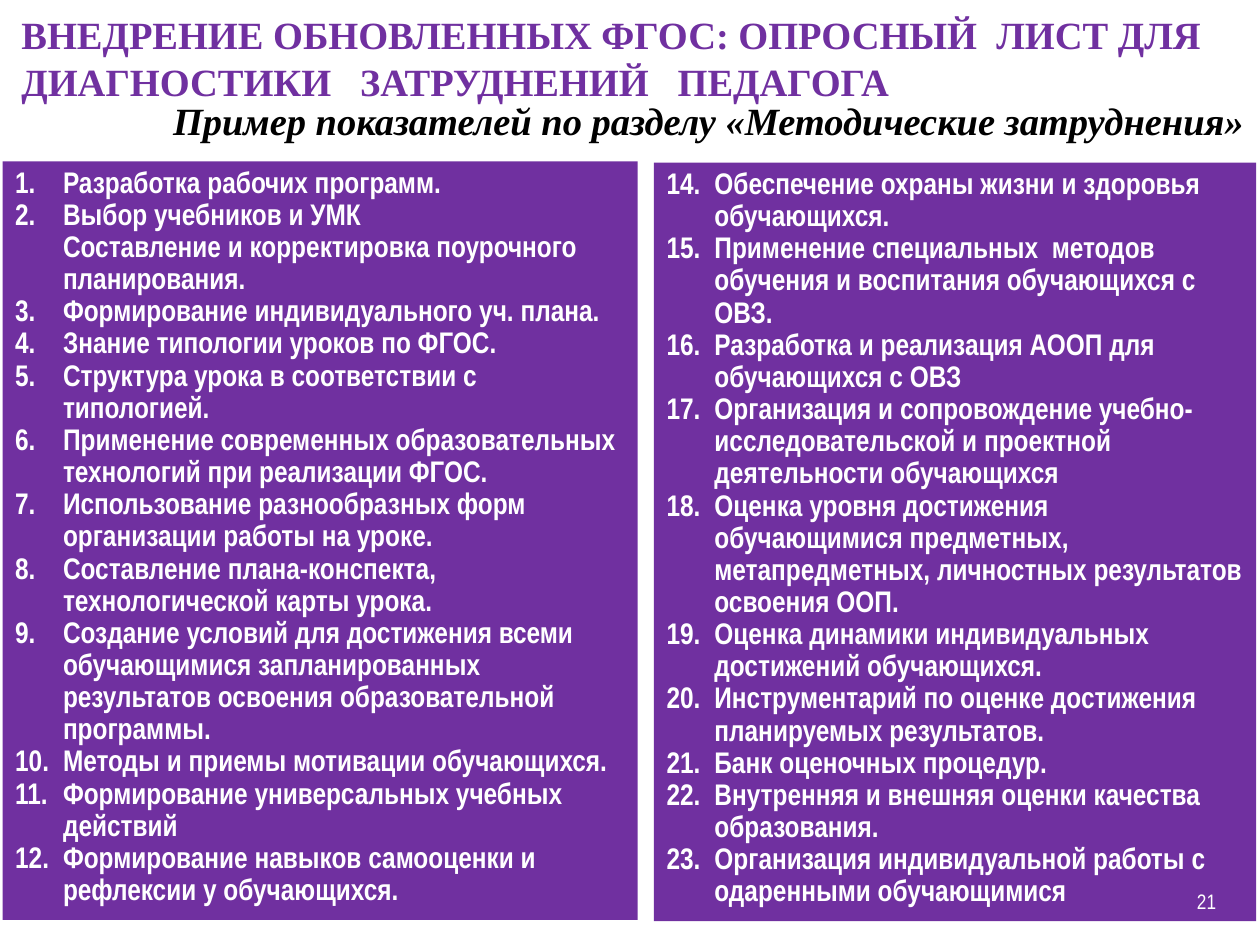
from copy import deepcopy
from dataclasses import dataclass

from pptx import Presentation
from pptx.dml.color import RGBColor
from pptx.enum.text import MSO_ANCHOR as Anchor, MSO_AUTO_SIZE as AutoSize, PP_ALIGN as Align
from pptx.oxml.ns import qn
from pptx.oxml.xmlchemy import OxmlElement
from pptx.util import Inches, Pt

PURPLE = RGBColor(0x70, 0x30, 0xA0)
WHITE = RGBColor(0xFF, 0xFF, 0xFF)
BLACK = RGBColor(0, 0, 0)
SERIF = "Times New Roman"
NARROW = "Arial Narrow"
INDENT = Inches(0.38)


@dataclass(frozen=True)
class Area:
    left: float
    top: float
    width: float
    height: float


@dataclass(frozen=True)
class Panel:
    area: Area
    start: int
    items: tuple[str, ...]


PANELS = (
    Panel(Area(0.02, 1.28, 5.04, 6.02), 1, (
        "Разработка рабочих программ.",
        "Выбор учебников и УМК \vСоставление и корректировка поурочного планирования.",
        "Формирование индивидуального уч. плана.",
        "Знание типологии уроков по ФГОС.",
        "Структура урока в соответствии с типологией.",
        "Применение современных образовательных технологий при реализации ФГОС.",
        "Использование разнообразных форм организации работы на уроке.",
        "Составление плана-конспекта, технологической карты урока.",
        "Создание условий для достижения всеми обучающимися запланированных "
        "результатов освоения образовательной программы.",
        "Методы и приемы мотивации обучающихся.",
        "Формирование универсальных учебных действий",
        "Формирование навыков самооценки и рефлексии у обучающихся.",
    )),
    Panel(Area(5.19, 1.29, 4.78, 6.02), 14, (
        "Обеспечение охраны жизни и здоровья обучающихся.",
        "Применение специальных  методов обучения и воспитания обучающихся с ОВЗ.",
        "Разработка и реализация АООП для обучающихся с ОВЗ",
        "Организация и сопровождение учебно-исследовательской и проектной "
        "деятельности обучающихся",
        "Оценка уровня достижения обучающимися предметных, метапредметных, "
        "личностных результатов освоения ООП.",
        "Оценка динамики индивидуальных достижений обучающихся.",
        "Инструментарий по оценке достижения планируемых результатов.",
        "Банк оценочных процедур.",
        "Внутренняя и внешняя оценки качества образования.",
        "Организация индивидуальной работы с одаренными обучающимися",
    )),
)


def place(box, area: Area, anchor=Anchor.TOP) -> None:
    box.left, box.top = Inches(area.left), Inches(area.top)
    box.width, box.height = Inches(area.width), Inches(area.height)
    frame = box.text_frame
    frame.word_wrap = True
    frame.auto_size = AutoSize.NONE
    frame.vertical_anchor = anchor


def write(para, text: str, *, size: float, font: str, color: RGBColor,
          bold: bool = False, italic: bool = False, align=Align.LEFT) -> None:
    para.text = text
    para.alignment = align
    para.space_before = Pt(0)
    for span in para.runs:
        span.font.size = Pt(size)
        span.font.name = font
        span.font.color.rgb = color
        span.font.bold = bold
        span.font.italic = italic
    for line_break in para._p.findall(qn("a:br")):
        line_break.insert(0, deepcopy(para.runs[0]._r.rPr))


def number(para, start: int) -> None:
    para.line_spacing = 0.9
    properties = para._p.get_or_add_pPr()
    properties.set("marL", str(INDENT))
    properties.set("indent", str(-INDENT))
    typeface = OxmlElement("a:buFont")
    typeface.set("typeface", NARROW)
    numbering = OxmlElement("a:buAutoNum")
    numbering.set("type", "arabicPeriod")
    if start > 1:
        numbering.set("startAt", str(start))
    properties.extend((typeface, numbering))


def fill_panel(box, panel: Panel) -> None:
    place(box, panel.area)
    box.fill.solid()
    box.fill.fore_color.rgb = PURPLE
    frame = box.text_frame
    for index, item in enumerate(panel.items):
        para = frame.add_paragraph() if index else frame.paragraphs[0]
        write(para, item, size=17, font=NARROW, color=WHITE, bold=True)
        number(para, panel.start)


def add_label(page, area: Area, text: str, anchor=Anchor.TOP, **style) -> None:
    box = page.shapes.add_textbox(0, 0, 0, 0)
    place(box, area, anchor)
    write(box.text_frame.paragraphs[0], text, align=Align.RIGHT, **style)


def main() -> None:
    deck = Presentation()
    deck.slide_width, deck.slide_height = Inches(10), Inches(7.5)
    page = deck.slides.add_slide(deck.slide_layouts.get_by_name("Two Content"))

    title = page.shapes.title
    place(title, Area(0.07, 0.04, 9.9, 0.84))
    write(title.text_frame.paragraphs[0],
          "ВНЕДРЕНИЕ ОБНОВЛЕННЫХ ФГОС: ОПРОСНЫЙ  ЛИСТ ДЛЯ   "
          "ДИАГНОСТИКИ   ЗАТРУДНЕНИЙ   ПЕДАГОГА",
          size=22, font=SERIF, color=PURPLE, bold=True)
    add_label(page, Area(0.4, 0.72, 9.57, 0.47),
              "Пример показателей по разделу «Методические затруднения»",
              size=22, font=SERIF, color=BLACK, bold=True, italic=True)
    for index, panel in enumerate(PANELS, start=1):
        fill_panel(page.placeholders[index], panel)
    add_label(page, Area(7.5, 6.95, 2.25, 0.4), "21", Anchor.MIDDLE,
              size=12, font=NARROW, color=WHITE)
    deck.save("out.pptx")


if __name__ == "__main__":
    main()
